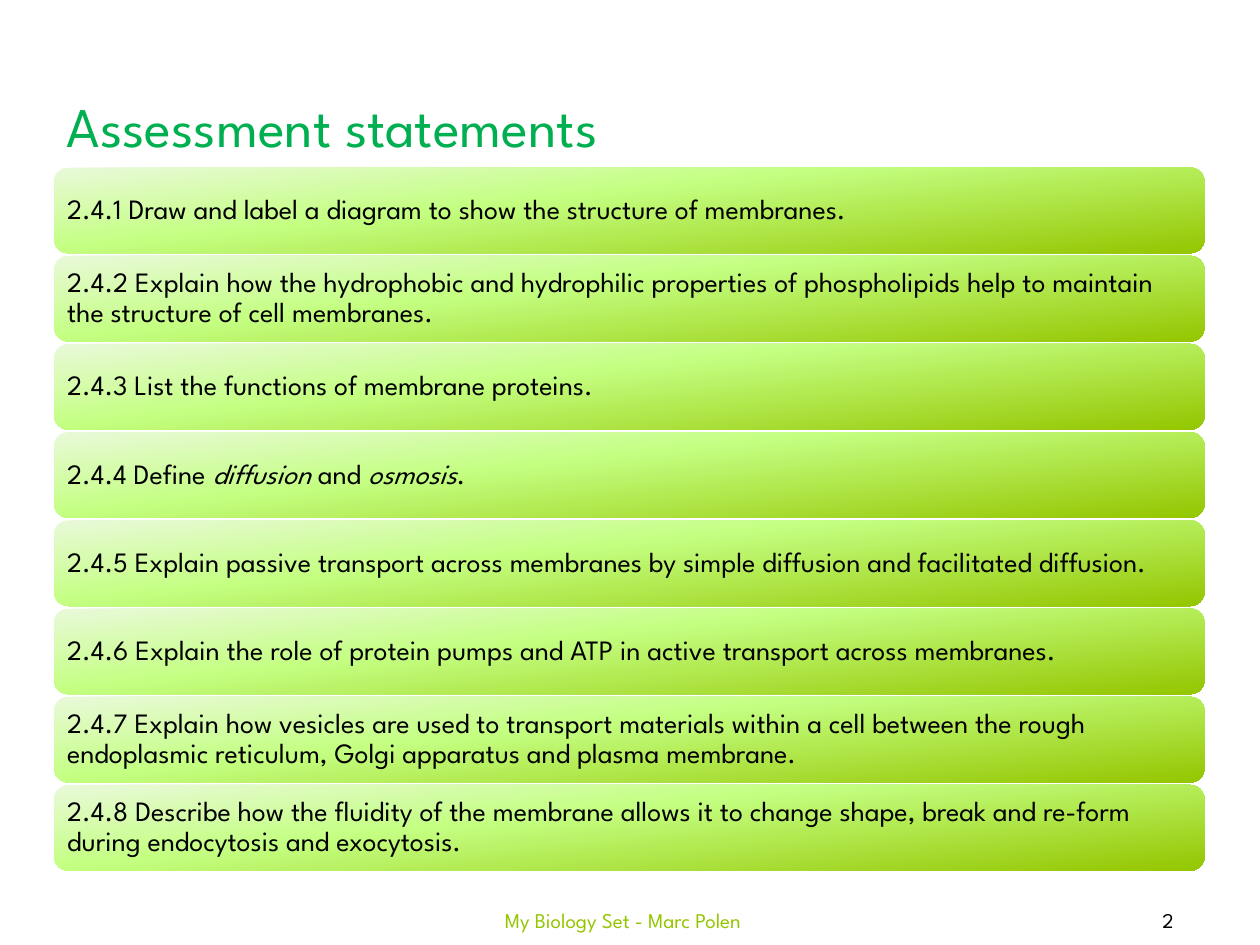
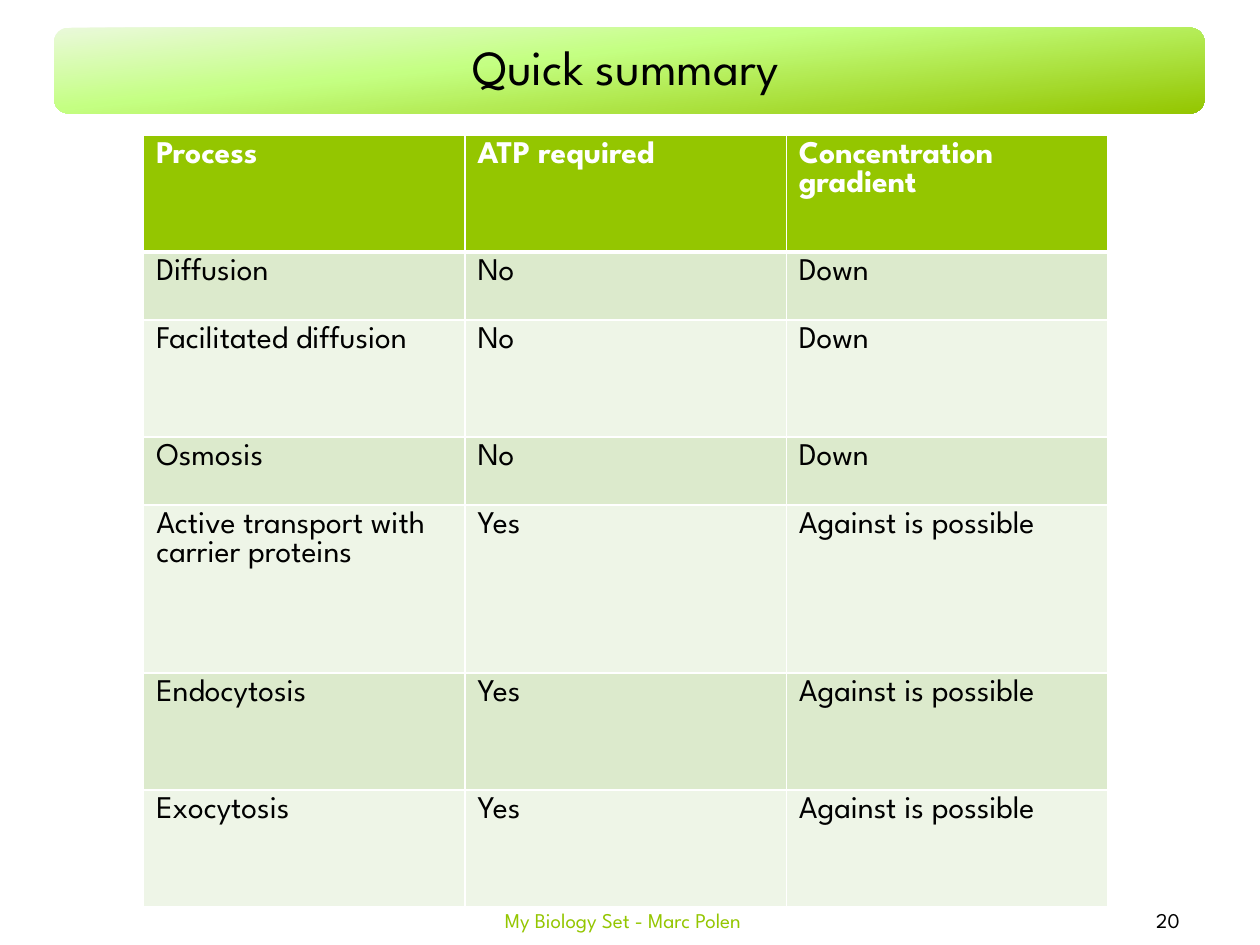
from lxml.etree import SubElement
from pptx import Presentation
from pptx.dml.color import RGBColor
from pptx.enum.shapes import MSO_SHAPE as Shape
from pptx.enum.text import MSO_ANCHOR as Anchor, MSO_AUTO_SIZE as AutoSize, PP_ALIGN as Align
from pptx.oxml import parse_xml
from pptx.oxml.ns import nsdecls, qn
from pptx.util import Inches, Pt

FONT = "League Spartan"
BLACK, WHITE, LIME, GREEN = "000000", "FFFFFF", "94C600", "00B050"
ROW_FILLS = ("DCEACC", "EEF5E7")
BAND_STOPS = ((0, "EAF9DA"), (40, "C4FF82"), (100, LIME))
BAND_ANGLE = 84
BAND_LEFT, BAND_WIDTH, BAND_HEIGHT, BAND_PITCH = 0.43, 9.13, 0.68, 0.7
FIRST_STATEMENT_TOP = 1.33
FOOTER = "My Biology Set - Marc Polen"

STATEMENTS_TITLE = "Assessment statements"
STATEMENTS = [
    "2.4.1 Draw and label a diagram to show the structure of membranes.",
    "2.4.2 Explain how the hydrophobic and hydrophilic properties of phospholipids help to maintain "
    "the structure of cell membranes.",
    "2.4.3 List the functions of membrane proteins.",
    "2.4.4 Define *diffusion *and *osmosis*.",
    "2.4.5 Explain passive transport across membranes by simple diffusion and facilitated diffusion.",
    "2.4.6 Explain the role of protein pumps and ATP in active transport across membranes.",
    "2.4.7 Explain how vesicles are used to transport materials within a cell between the rough "
    "endoplasmic reticulum, Golgi apparatus and plasma membrane.",
    "2.4.8 Describe how the fluidity of the membrane allows it to change shape, break and re-form "
    "during endocytosis and exocytosis.",
]

SUMMARY_TITLE = "Quick summary"
SUMMARY = [
    (0.93, "Process", "ATP required", "Concentration gradient"),
    (0.54, "Diffusion", "No", "Down"),
    (0.93, "Facilitated diffusion", "No", "Down"),
    (0.54, "Osmosis", "No", "Down"),
    (1.33, "Active transport with carrier proteins", "Yes", "Against is possible"),
    (0.93, "Endocytosis", "Yes", "Against is possible"),
    (0.93, "Exocytosis", "Yes", "Against is possible"),
]
SUMMARY_COLUMN = 2.55


def rgb(value):
    return RGBColor.from_string(value)


def write(frame, text, size=16, color=BLACK, bold=False, align=Align.LEFT,
          anchor=Anchor.MIDDLE, inset=None, spacing=None, wrap=True):
    frame.word_wrap = wrap
    frame.vertical_anchor = anchor
    if inset is not None:
        frame.margin_left = frame.margin_right = Inches(inset)
        frame.margin_top = frame.margin_bottom = Inches(inset)
    paragraph = frame.paragraphs[0]
    paragraph.alignment = align
    paragraph.line_spacing = spacing
    for index, part in enumerate(text.split("*")):
        run = paragraph.add_run()
        run.text = part
        font = run.font
        font.name, font.size, font.bold = FONT, Pt(size), bold
        font.italic = index % 2 == 1
        font.color.rgb = rgb(color)


def place(part, left, top, width, height):
    part.left, part.top = Inches(left), Inches(top)
    part.width, part.height = Inches(width), Inches(height)


def add_band(slide, top):
    band = slide.shapes.add_shape(Shape.ROUNDED_RECTANGLE, Inches(BAND_LEFT), Inches(top),
                                  Inches(BAND_WIDTH), Inches(BAND_HEIGHT))
    band.shadow.inherit = False
    band.line.fill.background()
    stops = "".join(f'<a:gs pos="{position * 1000}"><a:srgbClr val="{color}"/></a:gs>'
                    for position, color in BAND_STOPS)
    gradient = parse_xml(f'<a:gradFill {nsdecls("a")} rotWithShape="1"><a:gsLst>{stops}</a:gsLst>'
                         f'<a:lin ang="{BAND_ANGLE * 60000}" scaled="0"/></a:gradFill>')
    band.element.spPr.find(qn("a:prstGeom")).addnext(gradient)
    return band


def add_slide(deck, number):
    slide = deck.slides.add_slide(deck.slide_layouts[5])
    for text, left, width, color in ((str(number), 8.54, 1.46, BLACK), (FOOTER, 3.03, 3.83, LIME)):
        footer = slide.shapes.add_textbox(Inches(left), Inches(7.1), Inches(width), Inches(0.4))
        write(footer.text_frame, text, size=12, color=color, align=Align.CENTER)
    return slide


def add_title(slide, text, box, **style):
    title = slide.shapes.title
    place(title, *box)
    title.text_frame.auto_size = AutoSize.NONE
    write(title.text_frame, text, **style)
    slide.shapes.element.append(title.element)


def add_borders(cell, top=1, bottom=1):
    properties = cell._tc.get_or_add_tcPr()
    for side, width in (("L", 1), ("R", 1), ("T", top), ("B", bottom)):
        border = SubElement(properties, qn(f"a:ln{side}"), w=str(Pt(width)))
        SubElement(SubElement(border, qn("a:solidFill")), qn("a:srgbClr"), val=WHITE)


def build_statements(deck):
    slide = add_slide(deck, 2)
    add_title(slide, STATEMENTS_TITLE, (BAND_LEFT, 0.68, 5.17, 0.64), size=32, color=GREEN,
              anchor=Anchor.TOP, wrap=False)
    for index, statement in enumerate(STATEMENTS):
        band = add_band(slide, FIRST_STATEMENT_TOP + index * BAND_PITCH)
        write(band.text_frame, statement, inset=0.07, spacing=0.9)


def build_summary(deck):
    slide = add_slide(deck, 20)
    add_band(slide, 0.22)
    add_title(slide, SUMMARY_TITLE, (BAND_LEFT, 0.24, 9.07, 0.62), size=28, align=Align.CENTER,
              inset=0.07, spacing=0.9)
    columns = len(SUMMARY[0]) - 1
    table = slide.shapes.add_table(len(SUMMARY), columns, Inches(1.14), Inches(1.07),
                                   Inches(columns * SUMMARY_COLUMN),
                                   Inches(sum(row[0] for row in SUMMARY))).table
    for column in table.columns:
        column.width = Inches(SUMMARY_COLUMN)
    for row, (height, *texts) in enumerate(SUMMARY):
        table.rows[row].height = Inches(height)
        header = row == 0
        for column, text in enumerate(texts):
            cell = table.cell(row, column)
            add_borders(cell, top=3 if row == 1 else 1, bottom=3 if header else 1)
            cell.fill.solid()
            cell.fill.fore_color.rgb = rgb(LIME if header else ROW_FILLS[(row - 1) % 2])
            write(cell.text_frame, text, size=18, color=WHITE if header else BLACK, bold=header,
                  anchor=Anchor.TOP)


def main():
    deck = Presentation()
    deck.slide_width, deck.slide_height = Inches(10), Inches(7.5)
    build_statements(deck)
    build_summary(deck)
    deck.save("out.pptx")


if __name__ == "__main__":
    main()
